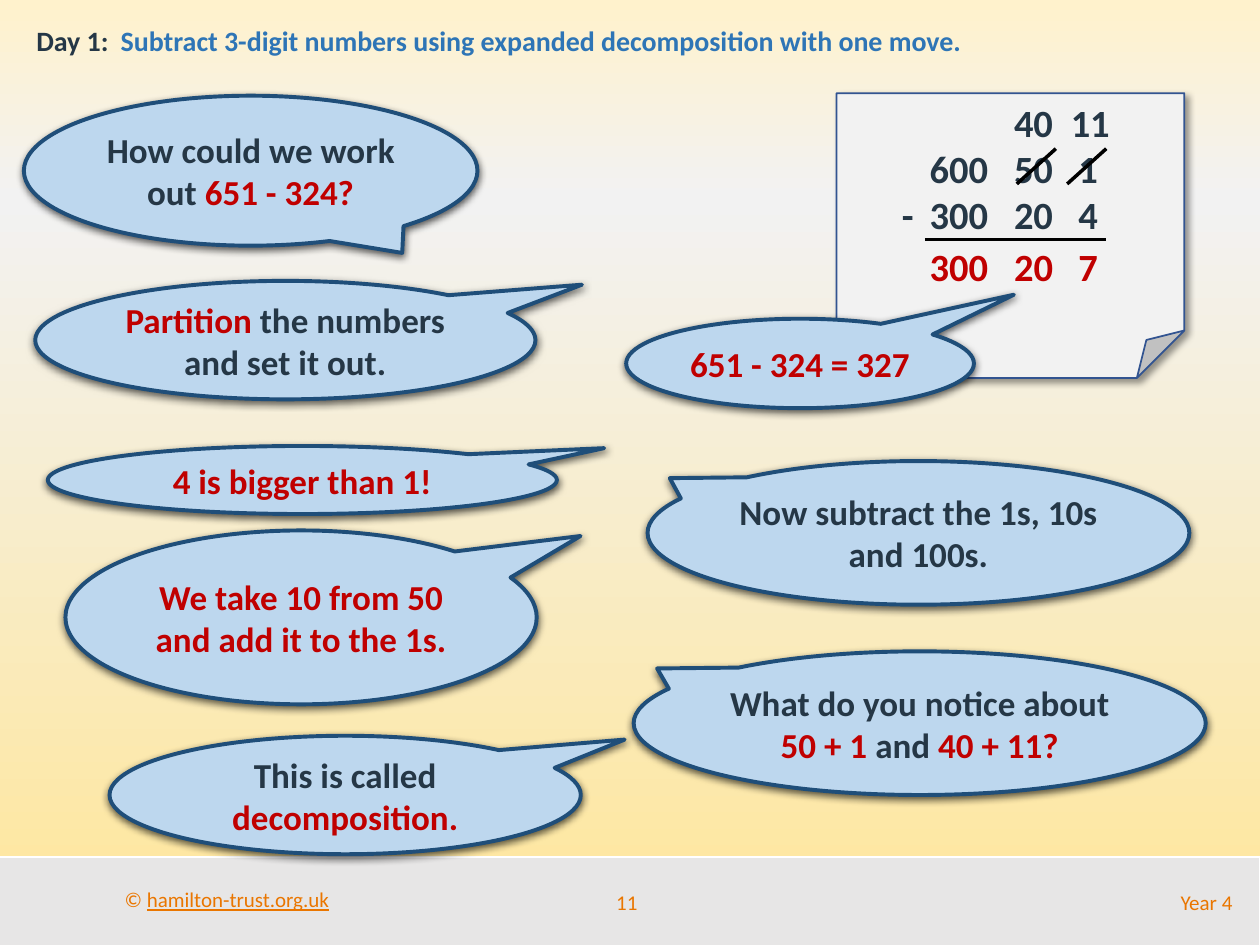
import copy
import pptx
import pptx.util
import pptx.dml.color
import pptx.enum.shapes
import pptx.enum.text
import pptx.oxml
import pptx.oxml.ns
import pptx.oxml.xmlchemy

Inches = pptx.util.Inches
Pt = pptx.util.Pt
qn = pptx.oxml.ns.qn
SHAPE = pptx.enum.shapes.MSO_SHAPE
ALIGN = pptx.enum.text.PP_ALIGN
ANCHOR = pptx.enum.text.MSO_ANCHOR

COLORS = {
    "ink": "253746", "red": "C00000", "blue": "2E75B6", "orange": "EA7600",
    "bubble": "BDD7EE", "rim": "1F4E79", "paper": "F2F2F2", "edge": "325491",
    "bar": "E7E6E6", "white": "FFFFFF", "black": "000000",
    "cream": "FFF2CC", "gold": "FFE699",
}


def rgb(name):
    return pptx.dml.color.RGBColor.from_string(COLORS[name])


class Deck:
    font = "Calibri"

    def __init__(self):
        self.prs = pptx.Presentation()
        self.prs.slide_width = Inches(10)
        self.prs.slide_height = Inches(7.5)
        self.slide = self.prs.slides.add_slide(self.prs.slide_layouts[6])

    def backdrop(self, stops):
        fill = self.slide.background.fill
        fill.gradient()
        fill.gradient_angle = 270
        items = self.slide.element.find(".//" + qn("a:gsLst"))
        items.append(copy.deepcopy(items[-1]))
        for stop, (place, name) in zip(fill.gradient_stops, stops):
            stop.position = place
            stop.color.rgb = rgb(name)

    def fill_in(self, para, parts, size, bold=True, align=None, tabs=()):
        if tabs:
            stops = pptx.oxml.xmlchemy.OxmlElement("a:tabLst")
            for place in tabs:
                stop = pptx.oxml.xmlchemy.OxmlElement("a:tab")
                stop.set("pos", str(Inches(place)))
                stop.set("algn", "l")
                stops.append(stop)
            para._p.get_or_add_pPr().append(stops)
        para.alignment = align
        for words, name in parts:
            run = para.add_run()
            run.text = words
            run.font.name = self.font
            run.font.size = Pt(size)
            run.font.bold = bold
            run.font.color.rgb = rgb(name)

    def text(self, box, parts, size, bold=True, align=None, tabs=(),
             anchor=ANCHOR.TOP):
        frame = self.slide.shapes.add_textbox(*map(Inches, box)).text_frame
        frame.word_wrap = True
        frame.vertical_anchor = anchor
        self.fill_in(frame.paragraphs[0], parts, size, bold, align, tabs)
        return frame

    def shape(self, kind, box, fill, line, width, shadow=None):
        item = self.slide.shapes.add_shape(kind, *map(Inches, box))
        item.shadow.inherit = False
        item.fill.solid()
        item.fill.fore_color.rgb = rgb(fill)
        item.line.color.rgb = rgb(line)
        item.line.width = Pt(width)
        if shadow:
            self.shade(item, *shadow)
        return item

    def shade(self, item, alpha, blur, dist, angle):
        item._element.spPr.find(qn("a:effectLst")).append(pptx.oxml.parse_xml(
            f'<a:outerShdw {pptx.oxml.ns.nsdecls("a")} blurRad="{Pt(blur)}" '
            f'dist="{Pt(dist)}" dir="{angle * 60000}" rotWithShape="0">'
            f'<a:srgbClr val="{COLORS["black"]}">'
            f'<a:alpha val="{alpha * 1000}"/></a:srgbClr></a:outerShdw>'))

    def bubble(self, box, tail, parts):
        item = self.shape(SHAPE.OVAL_CALLOUT, box, "bubble", "rim", 2.25,
                          (63, 4.5, 1.5, 90))
        for spot, value in enumerate(tail):
            item.adjustments[spot] = value
        frame = item.text_frame
        frame.word_wrap = True
        frame.vertical_anchor = ANCHOR.MIDDLE
        self.fill_in(frame.paragraphs[0], parts, 20, align=ALIGN.CENTER)

    def sheet(self, box, rows, tabs):
        item = self.shape(SHAPE.FOLDED_CORNER, box, "paper", "edge", 1,
                          (40, 4, 3, 45))
        frame = item.text_frame
        frame.word_wrap = True
        frame.vertical_anchor = ANCHOR.TOP
        frame.margin_top = Inches(0.41)
        for spot, row in enumerate(rows):
            para = frame.add_paragraph() if spot else frame.paragraphs[0]
            self.fill_in(para, [(row, "ink")], 22, align=ALIGN.LEFT, tabs=tabs)

    def line(self, *ends):
        item = self.slide.shapes.add_connector(
            pptx.enum.shapes.MSO_CONNECTOR.STRAIGHT, *map(Inches, ends))
        item.line.color.rgb = rgb("black")
        item.line.width = Pt(2)
        item._element.spPr.append(
            pptx.oxml.xmlchemy.OxmlElement("a:effectLst"))


def main():
    deck = Deck()
    deck.backdrop([(0, "cream"), (0.21, "paper"), (1, "gold")])

    # Footer
    deck.shape(SHAPE.RECTANGLE, (-0.06, 6.8, 10.06, 0.72), "bar", "white", 1)
    credit = deck.text((0.89, 6.99, 1.84, 0.3), [
        ("© ", "orange"), ("hamilton-trust.org.uk", "orange")], 12, False)
    credit.word_wrap = False
    credit.paragraphs[0].runs[1].font.underline = True
    for box, words, align in [
        ((4.58, 6.96, 0.79, 0.4), "11", ALIGN.CENTER),
        ((6.5, 6.96, 3.38, 0.4), "Year 4", ALIGN.RIGHT),
    ]:
        deck.text(box, [(words, "orange")], 12, False, align,
                  anchor=ANCHOR.MIDDLE)

    # Title
    deck.text((0.19, 0.14, 9.54, 0.37), [
        ("Day 1:\t", "ink"),
        ("Subtract 3-digit numbers using expanded decomposition "
         "with one move.", "blue")], 16, tabs=[0.67])

    # Worked sum on the paper
    deck.sheet((6.64, 0.74, 2.76, 2.26),
               ["\t\t600\t50\t1", "\t-\t300\t20\t4"], [0.42, 0.64, 1.31, 1.82])
    deck.line(7.34, 1.9, 8.78, 1.9)
    for left, words in [(7.28, "300"), (7.95, "20"), (8.46, "7")]:
        deck.text((left, 1.88, 0.75, 0.47), [(words, "red")], 22)
    for left in (8.07, 8.47):
        deck.line(left, 1.46, left + 0.31, 1.18)
    deck.text((7.95, 0.74, 1, 0.47), [("40\t11", "ink")], 22, tabs=[0.45])

    # Speech bubbles
    right, left = (0.593, -0.468), (-0.459, -0.381)
    for box, tail, parts in [
        ((0.19, 0.76, 3.6, 1.19), (0.334, 0.548),
         [("How could we work out ", "ink"), ("651 - 324?", "red")]),
        ((0.28, 2.23, 3.97, 0.94), right,
         [("Partition", "red"), (" the numbers and set it out.", "ink")]),
        ((0.38, 3.54, 4.04, 0.54), right, [("4 is bigger than 1!", "red")]),
        ((0.87, 5.84, 3.74, 0.94), right,
         [("This is called ", "ink"), ("decomposition.", "red")]),
        ((5.03, 5.17, 4.54, 1.14), left,
         [("What do you notice about ", "ink"), ("50 + 1 ", "red"),
          ("and ", "ink"), ("40 + 11?", "red")]),
        ((5.14, 3.66, 4.3, 1.14), left,
         [("Now subtract the 1s, 10s and 100s.", "ink")]),
        ((4.97, 2.53, 2.76, 0.71), (0.615, -0.769),
         [("651 - 324 = 327", "red")]),
        ((0.52, 4.21, 3.74, 1.38), right,
         [("We take 10 from 50 and add it to the 1s.", "red")]),
    ]:
        deck.bubble(box, tail, parts)

    deck.prs.save("out.pptx")


if __name__ == "__main__":
    main()
